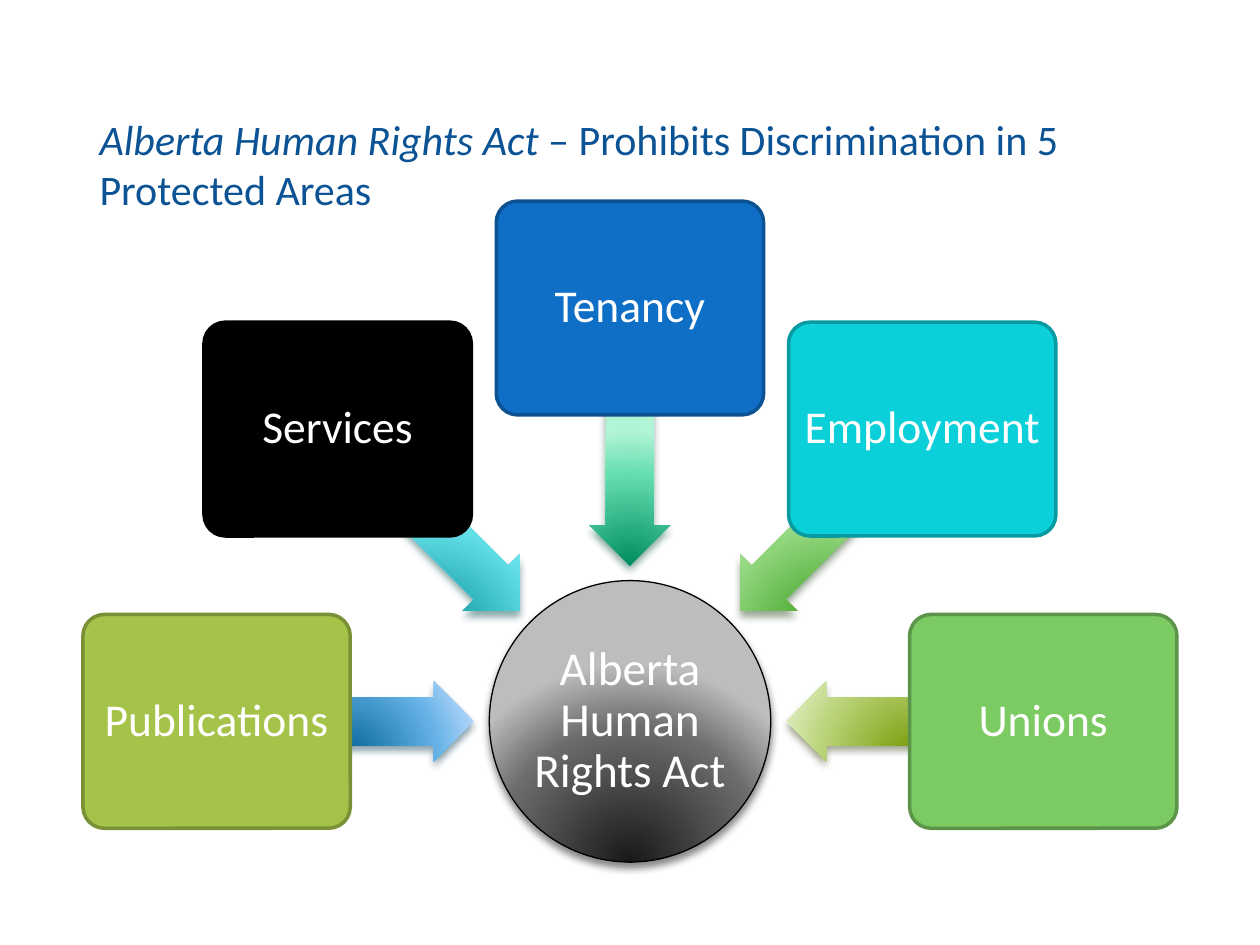
from math import cos, radians, sin

from lxml.etree import fromstring
from pptx import Presentation
from pptx.dml.color import RGBColor
from pptx.enum.shapes import MSO_SHAPE as Shape
from pptx.enum.text import MSO_ANCHOR as Anchor, PP_ALIGN as Align
from pptx.oxml.ns import nsdecls, qn
from pptx.util import Pt

FONT = "Calibri"
WHITE = RGBColor(0xFF, 0xFF, 0xFF)
BLACK = RGBColor(0x00, 0x00, 0x00)
TITLE_BLUE = RGBColor(0x0B, 0x53, 0x94)

TITLE = [("Alberta Human Rights Act", True),
         (" – Prohibits Discrimination in 5 Protected Areas", False)]
HUB = "Alberta Human Rights Act"
HUB_STOPS = ("191919", "6C6C6C", "BDBDBD")
AREAS = [
    ("Publications", RGBColor(0xA5, 0xC2, 0x49), RGBColor(0x7A, 0x90, 0x36),
     ("006091", "64B1E7", "B1D6F9"), "00374C"),
    ("Services", BLACK, BLACK,
     ("008A91", "64DFE7", "B1F3F9"), "024B4E"),
    ("Tenancy", RGBColor(0x0F, 0x6F, 0xC6), RGBColor(0x0B, 0x52, 0x92),
     ("008C60", "65DEB0", "B2F4D6"), "044A37"),
    ("Employment", RGBColor(0x0B, 0xD0, 0xD9), RGBColor(0x08, 0x9A, 0xA1),
     ("319811", "95D882", "C6EFBD"), "2B4821"),
    ("Unions", RGBColor(0x7C, 0xCA, 0x62), RGBColor(0x5C, 0x95, 0x49),
     ("729800", "B8D275", "DBECB9"), "3A4519"),
]

CENTER_X, CENTER_Y = 360, 412.2
HUB_SIZE = 160.8
BOX_WIDTH, BOX_HEIGHT, BOX_RADIUS = 152.8, 122.2, 236.2
ARROW_WIDTH, ARROW_HEIGHT, ARROW_RADIUS = 146.8, 45.8, 162.6


def add_centered(slide, kind, x, y, width, height):
    shape = slide.shapes.add_shape(kind, Pt(x - width / 2), Pt(y - height / 2),
                                   Pt(width), Pt(height))
    shape.shadow.inherit = False
    return shape


def set_glow_fill(shape, stops):
    shape.fill.background()
    marks = "".join(f'<a:gs pos="{position}"><a:srgbClr val="{color}"/></a:gs>'
                    for position, color in zip((0, 68000, 100000), stops))
    gradient = fromstring(
        f'<a:gradFill {nsdecls("a")} rotWithShape="0"><a:gsLst>{marks}</a:gsLst>'
        '<a:path path="circle"><a:fillToRect l="50000" t="130000" r="50000" b="-30000"/>'
        '</a:path></a:gradFill>')
    properties = shape.element.spPr
    properties.replace(properties.find(qn("a:noFill")), gradient)


def set_shadow(shape, color):
    shape.element.spPr.find(qn("a:effectLst")).append(fromstring(
        f'<a:outerShdw {nsdecls("a")} blurRad="{Pt(4.5)}" dist="{Pt(3)}" dir="5400000" '
        f'rotWithShape="0"><a:srgbClr val="{color}"><a:alpha val="48000"/>'
        '</a:srgbClr></a:outerShdw>'))


def set_text(shape, runs, size, color, align, anchor, spacing, margins):
    frame = shape.text_frame
    frame.word_wrap = True
    frame.vertical_anchor = anchor
    (frame.margin_left, frame.margin_top,
     frame.margin_right, frame.margin_bottom) = map(Pt, margins)
    paragraph = frame.paragraphs[0]
    paragraph.alignment = align
    paragraph.line_spacing = spacing
    for text, italic in runs:
        run = paragraph.add_run()
        run.text = text
        run.font.name = FONT
        run.font.size = Pt(size)
        run.font.italic = italic
        run.font.color.rgb = color


def set_label(shape, text, size, margin):
    set_text(shape, [(text, False)], size, WHITE, Align.CENTER, Anchor.MIDDLE,
             0.9, [margin] * 4)


def add_hub(slide):
    hub = add_centered(slide, Shape.OVAL, CENTER_X, CENTER_Y, HUB_SIZE, HUB_SIZE)
    set_glow_fill(hub, HUB_STOPS)
    hub.line.color.rgb = BLACK
    hub.line.width = Pt(0.75)
    set_shadow(hub, "000000")
    set_label(hub, HUB, 27, 1.4)


def add_area(slide, angle, name, fill, border, stops, shadow):
    across, down = cos(radians(angle)), sin(radians(angle))
    arrow = add_centered(slide, Shape.LEFT_ARROW, CENTER_X + ARROW_RADIUS * across,
                         CENTER_Y + ARROW_RADIUS * down, ARROW_WIDTH, ARROW_HEIGHT)
    arrow.adjustments[0], arrow.adjustments[1] = 0.6, 0.5
    arrow.rotation = angle % 360
    set_glow_fill(arrow, stops)
    arrow.line.fill.background()
    set_shadow(arrow, shadow)

    box = add_centered(slide, Shape.ROUNDED_RECTANGLE, CENTER_X + BOX_RADIUS * across,
                       CENTER_Y + BOX_RADIUS * down, BOX_WIDTH, BOX_HEIGHT)
    box.adjustments[0] = 0.1
    box.fill.solid()
    box.fill.fore_color.rgb = fill
    box.line.color.rgb = border
    box.line.width = Pt(2)
    set_label(box, name, 26, 3.6)


def main():
    presentation = Presentation()
    presentation.slide_width, presentation.slide_height = Pt(720), Pt(540)
    slide = presentation.slides.add_slide(presentation.slide_layouts[6])
    add_hub(slide)
    for index, area in enumerate(AREAS):
        add_area(slide, 180 + 45 * index, *area)
    title = slide.shapes.add_textbox(Pt(56.9), Pt(64.1), Pt(623.5), Pt(58.3))
    set_text(title, TITLE, 24, TITLE_BLUE, Align.LEFT, Anchor.BOTTOM, 1, (0, 3.6, 0, 0))
    presentation.save("out.pptx")


if __name__ == "__main__":
    main()
